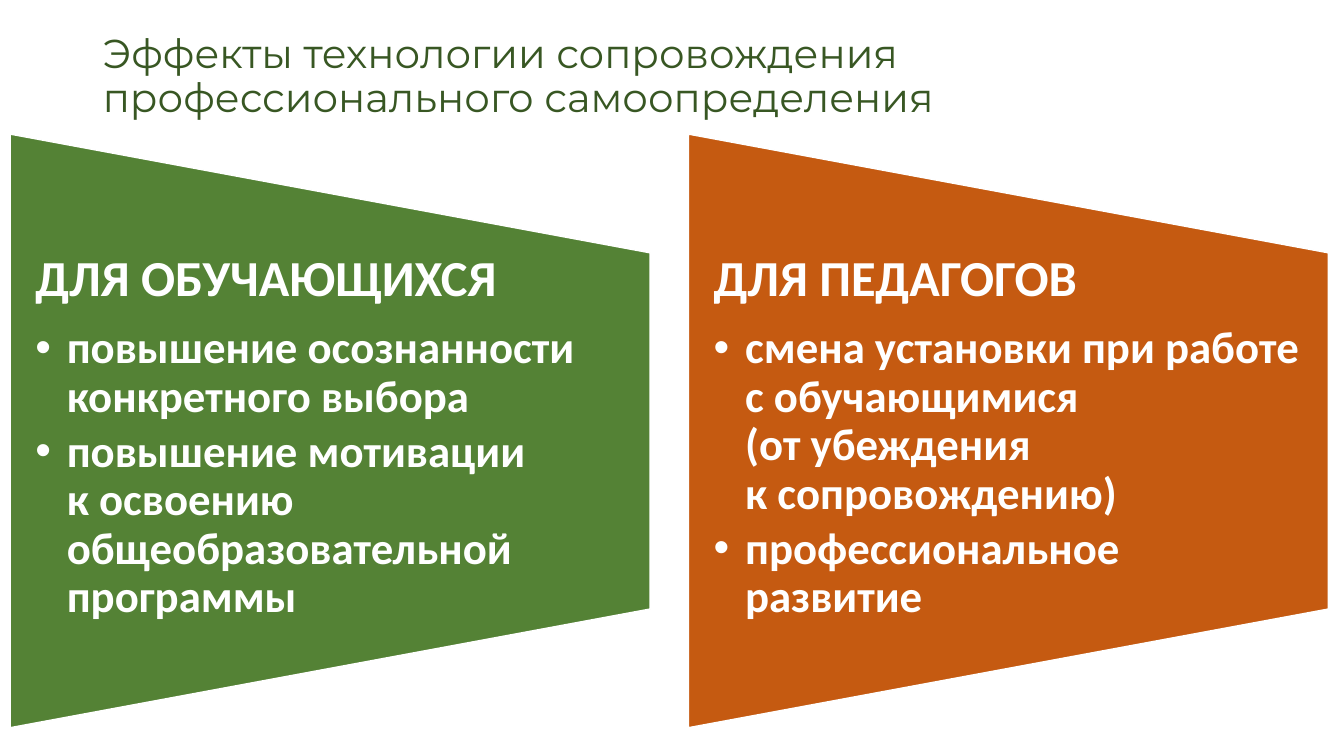
import pptx
import pptx.util
import pptx.dml.color
import pptx.enum.shapes
import pptx.enum.text
import pptx.oxml

Pt = pptx.util.Pt

COLOURS = {
    "title": "385723",
    "students": "548235",
    "teachers": "C55A11",
    "white": "FFFFFF",
}
TITLE = "Эффекты технологии сопровождения профессионального самоопределения"
PANELS = [
    ("students", "ДЛЯ ОБУЧАЮЩИХСЯ", [
        "повышение осознанности конкретного выбора",
        "повышение мотивации\vк освоению общеобразовательной программы",
    ]),
    ("teachers", "ДЛЯ ПЕДАГОГОВ", [
        "смена установки при работе с обучающимися\v(от убеждения\vк сопровождению)",
        "профессиональное развитие",
    ]),
]
PANEL_LEFT, PANEL_STEP = 7.2, 484.5
PANEL_WIDTH, PANEL_HEIGHT, PANEL_MIDDLE = 457.2, 424, 307.8
TEXT_TOP, TEXT_HEIGHT = 180.7, 254.2
BULLET_INDENT = 22.5


def colour(name):
    return pptx.dml.color.RGBColor.from_string(COLOURS[name])


def add_bullet(paragraph):
    properties = paragraph._p.get_or_add_pPr()
    properties.set("marL", str(Pt(BULLET_INDENT)))
    properties.set("indent", str(-Pt(BULLET_INDENT)))
    namespace = pptx.oxml.ns.nsdecls("a")
    properties.append(pptx.oxml.parse_xml(f'<a:buFont {namespace} typeface="Arial"/>'))
    properties.append(pptx.oxml.parse_xml(f'<a:buChar {namespace} char="•"/>'))


def write(paragraph, text, *, size, font="Calibri", tint="white", bold=False,
          space_after=0, bullet=False):
    paragraph.text = text
    paragraph.alignment = pptx.enum.text.PP_ALIGN.LEFT
    paragraph.line_spacing = 0.9
    paragraph.space_before = Pt(0)
    paragraph.space_after = Pt(space_after)
    if bullet:
        paragraph.level = 1
        add_bullet(paragraph)
    for run in paragraph.runs:
        run.font.name = font
        run.font.size = Pt(size)
        run.font.bold = bold
        run.font.color.rgb = colour(tint)


class SlideBuilder:
    def __init__(self, presentation):
        self.slide = presentation.slides.add_slide(presentation.slide_layouts[5])

    def title(self, text):
        title = self.slide.shapes.title
        title.left, title.top, title.width, title.height = Pt(66.25), Pt(28.8), Pt(828), Pt(53.3)
        frame = title.text_frame
        frame.word_wrap = True
        frame.auto_size = pptx.enum.text.MSO_AUTO_SIZE.NONE
        frame.vertical_anchor = pptx.enum.text.MSO_ANCHOR.MIDDLE
        write(frame.paragraphs[0], text, size=28.8, font="Montserrat", tint="title")

    def trapezoid(self, left, fill):
        """Draw a panel narrowing to the right: the preset turned by 270 degrees."""
        shape = self.slide.shapes.add_shape(
            pptx.enum.shapes.MSO_SHAPE.FLOWCHART_MANUAL_OPERATION,
            Pt(left + (PANEL_WIDTH - PANEL_HEIGHT) / 2), Pt(PANEL_MIDDLE - PANEL_WIDTH / 2),
            Pt(PANEL_HEIGHT), Pt(PANEL_WIDTH))
        shape.rotation = 270
        shape.shadow.inherit = False
        shape.fill.solid()
        shape.fill.fore_color.rgb = colour(fill)
        shape.line.color.rgb = colour("white")
        shape.line.width = Pt(1)

    def panel_text(self, left, heading, points):
        box = self.slide.shapes.add_textbox(
            Pt(left), Pt(TEXT_TOP), Pt(PANEL_WIDTH), Pt(TEXT_HEIGHT))
        frame = box.text_frame
        frame.word_wrap = True
        frame.margin_left = frame.margin_right = Pt(18)
        frame.margin_top = frame.margin_bottom = Pt(0)
        write(frame.paragraphs[0], heading, size=36, bold=True, space_after=12.6)
        for point in points:
            write(frame.add_paragraph(), point, size=32, bold=True, space_after=4.8, bullet=True)


def main():
    presentation = pptx.Presentation()
    presentation.slide_width, presentation.slide_height = Pt(960), Pt(540)
    builder = SlideBuilder(presentation)
    builder.title(TITLE)
    for index, (fill, heading, points) in enumerate(PANELS):
        left = PANEL_LEFT + index * PANEL_STEP
        builder.trapezoid(left, fill)
        builder.panel_text(left, heading, points)
    presentation.save("out.pptx")


if __name__ == "__main__":
    main()
